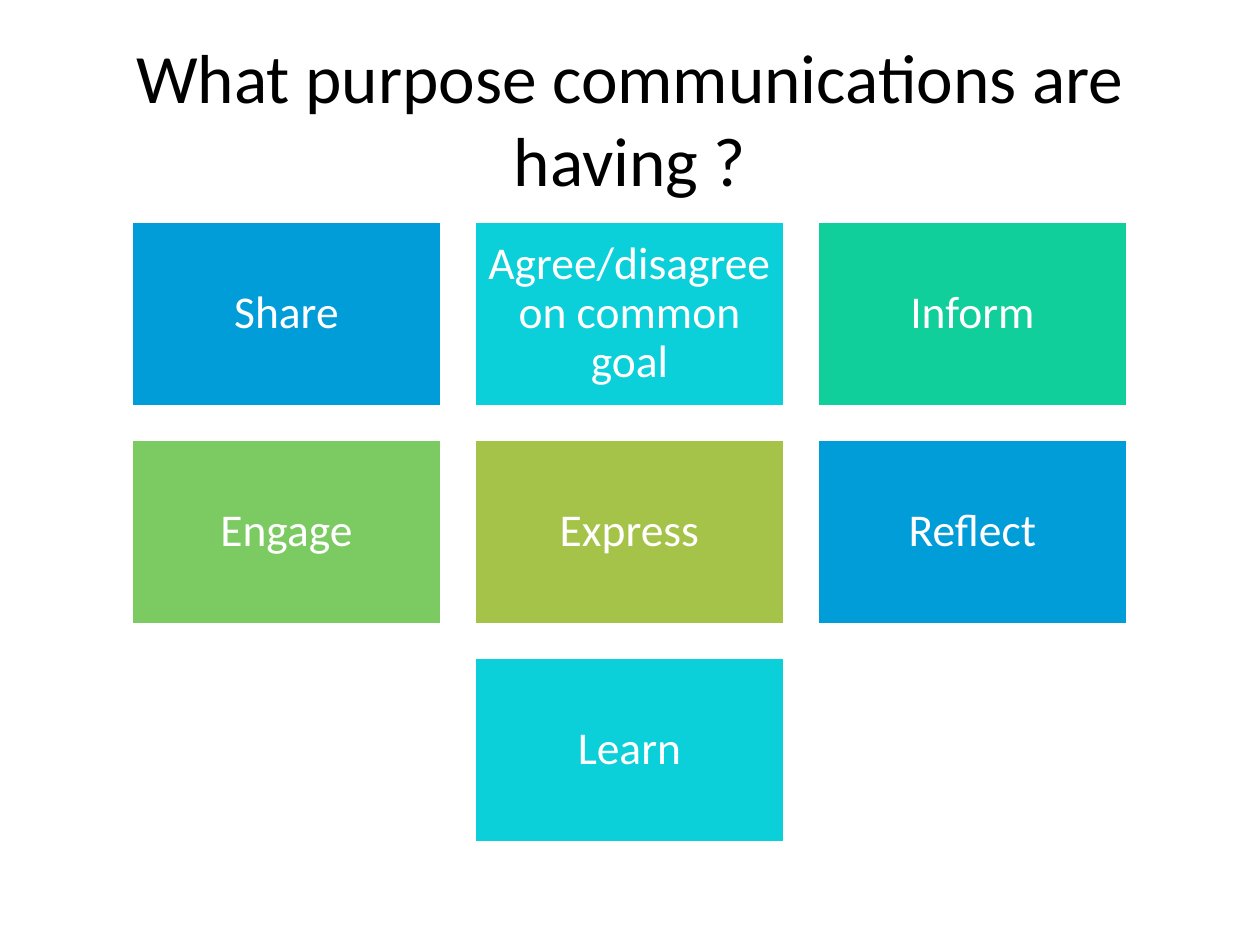
from dataclasses import dataclass

from pptx import Presentation
from pptx import util as u
from pptx.dml.color import RGBColor
from pptx.enum import shapes, text

EMU_PER_PX = 914400 / 126
SLIDE_WIDTH, SLIDE_HEIGHT = 1260, 945
TILE_WIDTH, TILE_HEIGHT, TILE_GAP = 311, 186, 32
GRID_TOP, COLUMNS = 221, 3
TILE_INSET = 14
TITLE_BOX = (63, 38, 1134, 158)

TITLE = "What purpose communications are having ?"
PURPOSES = [
    "Share",
    "Agree/disagree on common goal",
    "Inform",
    "Engage",
    "Express",
    "Reflect",
    "Learn",
]


@dataclass(frozen=True)
class Theme:
    font: str = "Calibri"
    title_size: float = 39.6
    tile_size: float = 26
    outline_width: float = 2
    title_color: str = "000000"
    light: str = "FFFFFF"
    accents: tuple = ("009DD9", "0BD0D9", "10CF9B", "7CCA62", "A5C249")


THEME = Theme()


def px(length):
    return u.Emu(round(length * EMU_PER_PX))


def color(value):
    return RGBColor.from_string(value)


def format_paragraph(paragraph, size, font_color):
    paragraph.alignment = text.PP_ALIGN.CENTER
    paragraph.font.name = THEME.font
    paragraph.font.size = u.Pt(size)
    paragraph.font.color.rgb = color(font_color)


def set_title(slide):
    title = slide.shapes.title
    title.left, title.top, title.width, title.height = map(px, TITLE_BOX)
    frame = title.text_frame
    frame.text = TITLE
    frame.word_wrap = True
    frame.auto_size = text.MSO_AUTO_SIZE.NONE
    frame.vertical_anchor = text.MSO_ANCHOR.MIDDLE
    format_paragraph(frame.paragraphs[0], THEME.title_size, THEME.title_color)


def add_tile(slide, label, left, top, fill_color):
    tile = slide.shapes.add_shape(
        shapes.MSO_SHAPE.RECTANGLE, px(left), px(top), px(TILE_WIDTH), px(TILE_HEIGHT)
    )
    tile.shadow.inherit = False
    tile.fill.solid()
    tile.fill.fore_color.rgb = color(fill_color)
    tile.line.color.rgb = color(THEME.light)
    tile.line.width = u.Pt(THEME.outline_width)

    frame = tile.text_frame
    frame.text = label
    frame.word_wrap = True
    frame.vertical_anchor = text.MSO_ANCHOR.MIDDLE
    frame.margin_left = frame.margin_right = px(TILE_INSET)
    frame.margin_top = frame.margin_bottom = px(TILE_INSET)
    paragraph = frame.paragraphs[0]
    paragraph.line_spacing = 0.9
    format_paragraph(paragraph, THEME.tile_size, THEME.light)


def add_tile_grid(slide, labels):
    for index, label in enumerate(labels):
        row, column = divmod(index, COLUMNS)
        row_count = min(COLUMNS, len(labels) - row * COLUMNS)
        row_width = row_count * (TILE_WIDTH + TILE_GAP) - TILE_GAP
        left = (SLIDE_WIDTH - row_width) // 2 + column * (TILE_WIDTH + TILE_GAP)
        top = GRID_TOP + row * (TILE_HEIGHT + TILE_GAP)
        add_tile(slide, label, left, top, THEME.accents[index % len(THEME.accents)])


def main():
    presentation = Presentation()
    presentation.slide_width = px(SLIDE_WIDTH)
    presentation.slide_height = px(SLIDE_HEIGHT)
    title_only = presentation.slide_layouts.get_by_name("Title Only")
    slide = presentation.slides.add_slide(title_only)
    set_title(slide)
    add_tile_grid(slide, PURPOSES)
    presentation.save("out.pptx")


if __name__ == "__main__":
    main()
